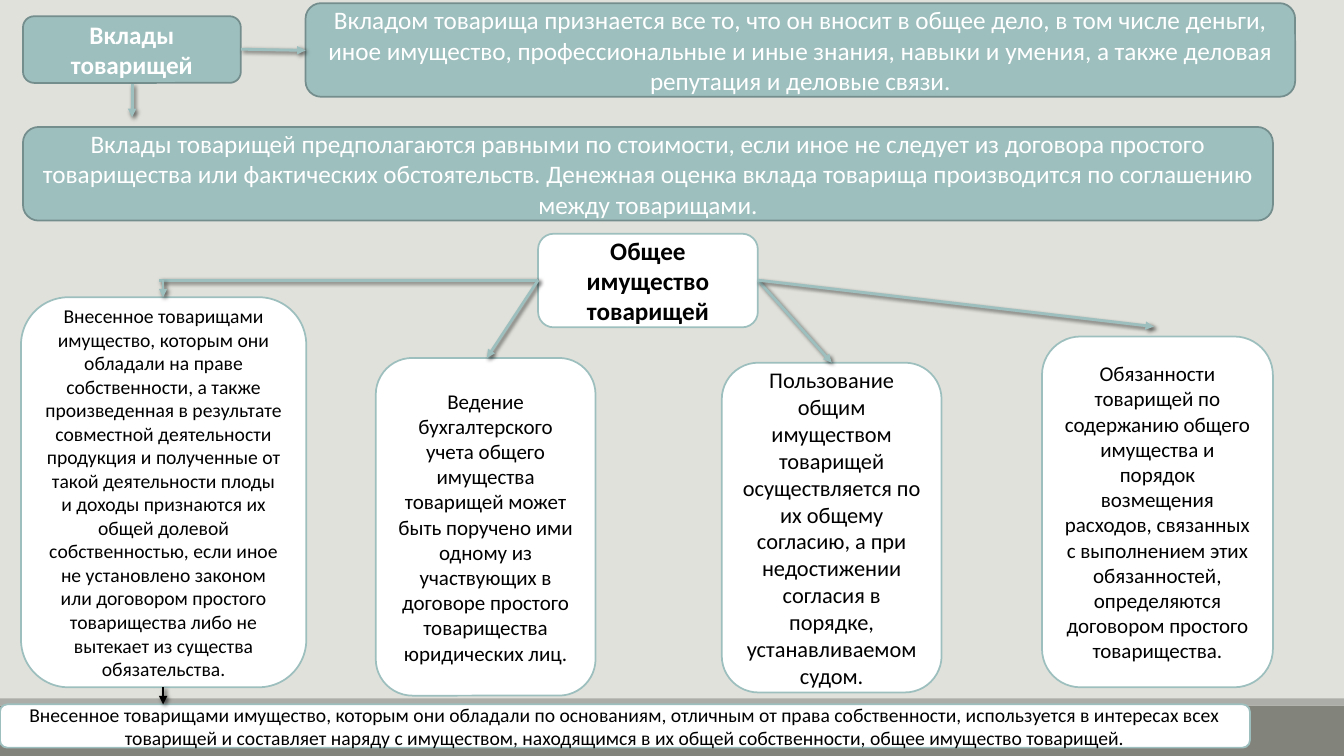
from lxml import etree
from pptx import Presentation
from pptx.dml.color import RGBColor
from pptx.enum.shapes import MSO_CONNECTOR, MSO_SHAPE
from pptx.enum.text import MSO_ANCHOR, PP_ALIGN
from pptx.oxml import parse_xml
from pptx.oxml.ns import nsdecls, qn
from pptx.util import Cm, Pt

RECT, ROUND = MSO_SHAPE.RECTANGLE, MSO_SHAPE.ROUNDED_RECTANGLE
LINE = MSO_CONNECTOR.STRAIGHT
MIDDLE, CENTER = MSO_ANCHOR.MIDDLE, PP_ALIGN.CENTER

COLORS = {
    "back": "E1E1DB", "bar": "82847C", "strip": "ACADA8",
    "teal": "9DBFBE", "edge": "748D8D", "white": "FFFFFF", "black": "000000",
}
# Box looks: fill, line, text
TEAL = ("teal", "edge", "white")
WHITE = ("white", "teal", "black")

SHADOW = f"""<a:effectLst {nsdecls('a')}>
  <a:outerShdw blurRad="38100" dist="25400" dir="2700000" rotWithShape="0">
    <a:srgbClr val="000000"><a:alpha val="60000"/></a:srgbClr>
  </a:outerShdw>
</a:effectLst>"""


def color(name):
    return RGBColor.from_string(COLORS[name])


class Board:
    """Style and current slide."""

    font = "Calibri"

    def __init__(self, deck):
        self.slide = deck.slides.add_slide(deck.slide_layouts[6])
        fill = self.slide.background.fill
        fill.solid()
        fill.fore_color.rgb = color("back")

    def shape(self, kind, place, fill):
        item = self.slide.shapes.add_shape(kind, *map(Cm, place))
        item.shadow.inherit = False
        item.fill.solid()
        item.fill.fore_color.rgb = color(fill)
        return item

    def bar(self, place, fill):
        self.shape(RECT, place, fill).line.fill.background()

    def box(self, place, text, look, size=18, bold=False):
        fill, edge, ink = look
        item = self.shape(ROUND, place, fill)
        item.line.color.rgb = color(edge)
        item.line.width = Pt(1.25)
        frame = item.text_frame
        frame.word_wrap = True
        frame.vertical_anchor = MIDDLE
        para = frame.paragraphs[0]
        para.text = text
        para.alignment = CENTER
        para.font.name = self.font
        para.font.size = Pt(size)
        para.font.bold = bold
        para.font.color.rgb = color(ink)

    def link(self, start, end, ink="teal", head=True):
        item = self.slide.shapes.add_connector(LINE, *map(Cm, start + end))
        item.line.color.rgb = color(ink)
        item.line.width = Pt(2)
        if head:
            etree.SubElement(item.line._get_or_add_ln(), qn("a:tailEnd"), type="triangle")
        item._element.spPr.append(parse_xml(SHADOW))


def main():
    deck = Presentation()
    deck.slide_width, deck.slide_height = Cm(33.87), Cm(19.05)
    board = Board(deck)

    # Footer bands
    board.bar((0, 17.78, 33.87, 1.27), "bar")
    board.bar((0, 17.6, 33.87, 0.18), "strip")

    # Contributions
    board.box((0.58, 0.41, 5.49, 1.68), "Вклады товарищей", TEAL, bold=True)
    board.box((7.7, 0.08, 24.94, 2.36),
              "Вкладом товарища признается все то, что он вносит в общее дело, "
              "в том числе деньги, иное имущество, профессиональные и иные знания, "
              "навыки и умения, а также деловая репутация и деловые связи.", TEAL)
    board.box((0.58, 3.2, 31.5, 2.36),
              "Вклады товарищей предполагаются равными по стоимости, если иное "
              "не следует из договора простого товарищества или фактических "
              "обстоятельств. Денежная оценка вклада товарища производится по "
              "соглашению между товарищами.", TEAL)
    board.link((6.07, 1.24), (7.7, 1.27))
    board.link((3.33, 2.11), (3.33, 2.95))

    # Common property and its four cards
    board.box((13.56, 5.89, 5.54, 2.36), "Общее имущество товарищей", WHITE, bold=True)
    cards = [
        ((0.53, 7.49, 7.19, 9.83), 14,
         "Внесенное товарищами имущество, которым они обладали на праве "
         "собственности, а также произведенная в результате совместной "
         "деятельности продукция и полученные от такой деятельности плоды и "
         "доходы признаются их общей долевой собственностью, если иное не "
         "установлено законом или договором простого товарищества либо не "
         "вытекает из существа обязательства."),
        ((9.47, 9.02, 5.54, 8.51), 15,
         "Ведение бухгалтерского учета общего имущества товарищей может быть "
         "поручено ими одному из участвующих в договоре простого товарищества "
         "юридических лиц."),
        ((18.19, 9.14, 5.54, 8.31), 16,
         "Пользование общим имуществом товарищей осуществляется по их общему "
         "согласию, а при недостижении согласия в порядке, устанавливаемом судом."),
        ((26.26, 8.48, 5.82, 8.84), 15,
         "Обязанности товарищей по содержанию общего имущества и порядок "
         "возмещения расходов, связанных с выполнением этих обязанностей, "
         "определяются договором простого товарищества."),
    ]
    for place, size, text in cards:
        board.box(place, text, WHITE, size)

    # Links from the common property
    left, right = (13.56, 7.06), (19.1, 7.06)
    board.link(left, (4.01, 7.06), head=False)
    board.link((4.11, 7.06), (4.11, 7.49))
    board.link(left, (12.27, 9.02))
    board.link(right, (20.96, 9.14))
    board.link(right, (29.08, 8.23))

    # Property held on other grounds
    board.box((0, 17.75, 31.5, 1.09),
              "Внесенное товарищами имущество, которым они обладали по основаниям, "
              "отличным от права собственности, используется в интересах всех "
              "товарищей и составляет наряду с имуществом, находящимся в их общей "
              "собственности, общее имущество товарищей.", WHITE, 14)
    board.link((4.11, 17.32), (4.11, 17.75), "black")

    deck.save("out.pptx")


if __name__ == "__main__":
    main()
